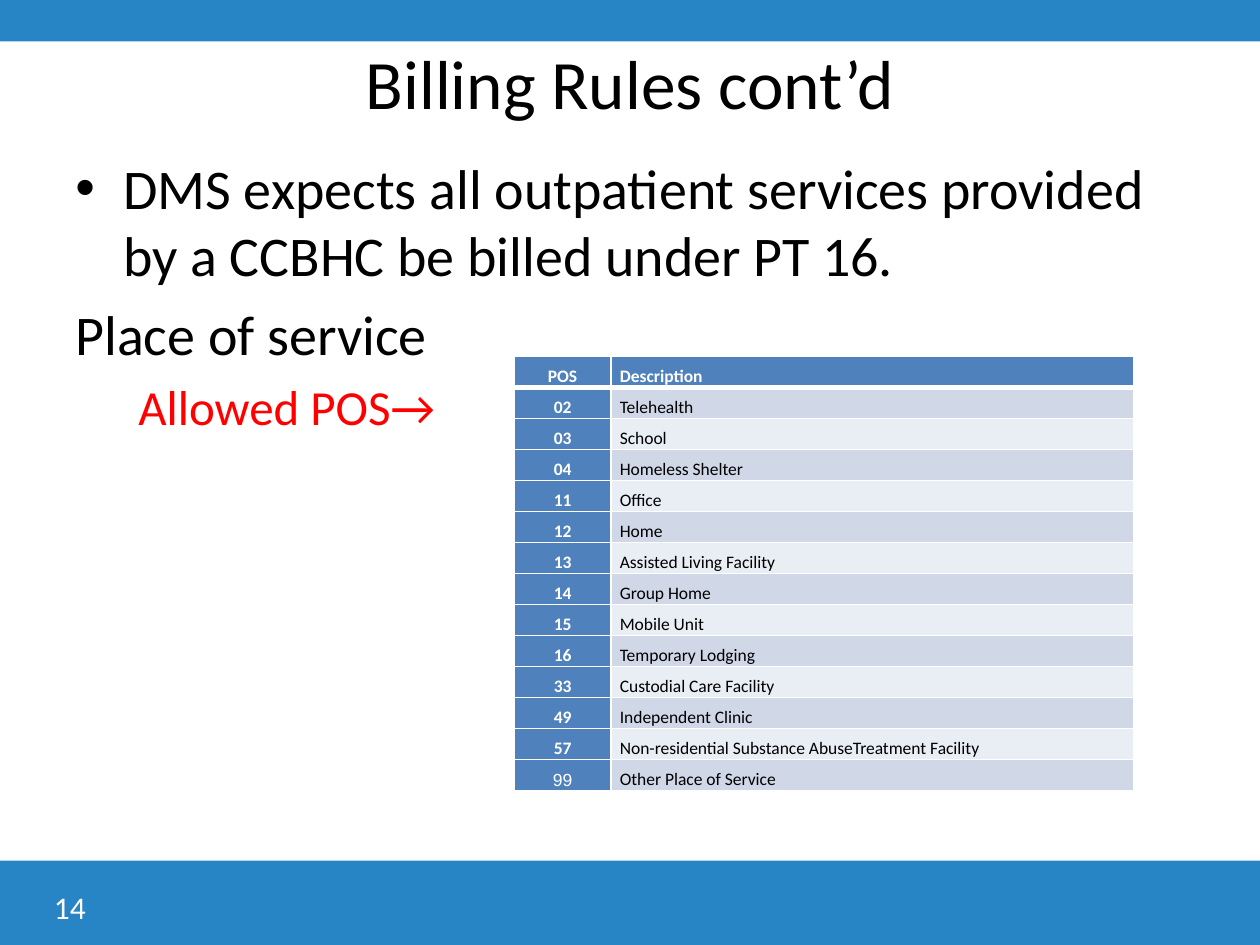
from dataclasses import dataclass

from lxml import etree
from pptx import Presentation
from pptx.dml.color import RGBColor
from pptx.enum import shapes, text
from pptx.oxml.ns import qn
from pptx.util import Inches, Pt

HUES = {
    "band": "2784C5", "head": "4F81BD", "odd": "D0D8E8", "even": "E9EDF4",
    "black": "000000", "white": "FFFFFF", "red": "FF0000",
}
LEFT, MID = text.PP_ALIGN.LEFT, text.PP_ALIGN.CENTER


@dataclass
class Style:
    size: float
    hue: str = "black"
    bold: bool = False
    font: str = "Calibri"


@dataclass
class Line:
    words: str
    style: Style
    before: float = 0
    margin: float = 0
    bullet: bool = False


@dataclass
class Place:
    code: str
    name: str


LINES = [
    Line("DMS expects all outpatient services provided by a CCBHC be billed "
         "under PT 16.", Style(32), margin=0.38, bullet=True),
    Line("Place of service", Style(32), before=6.4),
    Line("Allowed POS→", Style(28, "red"), before=5.6, margin=0.5),
]

PLACES = [
    Place("POS", "Description"),
    Place("02", "Telehealth"),
    Place("03", "School"),
    Place("04", "Homeless Shelter"),
    Place("11", "Office"),
    Place("12", "Home"),
    Place("13", "Assisted Living Facility"),
    Place("14", "Group Home"),
    Place("15", "Mobile Unit"),
    Place("16", "Temporary Lodging"),
    Place("33", "Custodial Care Facility"),
    Place("49", "Independent Clinic"),
    Place("57", "Non-residential Substance AbuseTreatment Facility"),
    Place("99", "Other Place of Service"),
]


def tint(hue: str) -> RGBColor:
    return RGBColor.from_string(HUES[hue])


def write(para, words: str, style: Style, align=LEFT) -> None:
    para.alignment = align
    run = para.add_run()
    run.text = words
    font = run.font
    font.name, font.size, font.bold = style.font, Pt(style.size), style.bold
    font.color.rgb = tint(style.hue)


def add_band(slide, top: float, height: float) -> None:
    band = slide.shapes.add_shape(
        shapes.MSO_SHAPE.RECTANGLE, 0, Inches(top), Inches(10), Inches(height))
    band.shadow.inherit = False
    band.fill.solid()
    band.fill.fore_color.rgb = tint("band")
    band.line.fill.background()


def add_box(slide, left: float, top: float, width: float, height: float):
    box = slide.shapes.add_textbox(
        Inches(left), Inches(top), Inches(width), Inches(height))
    box.text_frame.word_wrap = True
    return box.text_frame


def set_title(slide, words: str) -> None:
    title = slide.shapes.title
    title.left, title.top = Inches(0.5), Inches(0.3)
    title.width, title.height = Inches(9), Inches(0.7)
    title.text_frame.vertical_anchor = text.MSO_ANCHOR.MIDDLE
    write(title.text_frame.paragraphs[0], words, Style(39.6), MID)


def add_body(slide, lines: list[Line]) -> None:
    frame = add_box(slide, 0.5, 1.17, 9, 5.53)
    for i, line in enumerate(lines):
        para = frame.add_paragraph() if i else frame.paragraphs[0]
        props = para._p.get_or_add_pPr()
        props.set("marL", str(Inches(line.margin)))
        if line.bullet:
            props.set("indent", str(-Inches(line.margin)))
            face = etree.SubElement(props, qn("a:buFont"))
            face.set("typeface", "Arial")
            etree.SubElement(props, qn("a:buChar")).set("char", "•")
        if line.before:
            para.space_before = Pt(line.before)
        write(para, line.words, line.style)


def edge_cell(cell, base: float) -> None:
    """Draw white borders, with the bottom one base points wide."""
    props = cell._tc.get_or_add_tcPr()
    widths = {"a:lnL": 1, "a:lnR": 1, "a:lnT": 1, "a:lnB": base}
    for i, (tag, width) in enumerate(widths.items()):
        edge = etree.Element(qn(tag), w=str(Pt(width)))
        fill = etree.SubElement(edge, qn("a:solidFill"))
        etree.SubElement(fill, qn("a:srgbClr")).set("val", HUES["white"])
        props.insert(i, edge)


def fill_cell(cell, words: str, style: Style, hue: str, align, base: float) -> None:
    cell.margin_left = cell.margin_right = Inches(0.07)
    cell.margin_top = cell.margin_bottom = 0
    cell.vertical_anchor = text.MSO_ANCHOR.BOTTOM
    cell.fill.solid()
    cell.fill.fore_color.rgb = tint(hue)
    write(cell.text_frame.paragraphs[0], words, style, align)
    edge_cell(cell, base)


def add_places(slide, places: list[Place]) -> None:
    count = len(places)
    grid = slide.shapes.add_table(
        count, 2, Inches(4.08), Inches(2.83), Inches(4.92), Inches(3.45)).table
    for col, width in zip(grid.columns, (0.77, 4.15)):
        col.width = Inches(width)
    head, plain = Style(10, "white", True), Style(10)
    last = Style(10, "white", font="Arial")
    for i, place in enumerate(places):
        grid.rows[i].height = Inches(3.45 / count)
        base = 1 if i else 3
        mark = last if i == count - 1 else head
        fill_cell(grid.cell(i, 0), place.code, mark, "head", MID, base)
        hue = ("odd" if i % 2 else "even") if i else "head"
        fill_cell(grid.cell(i, 1), place.name, plain if i else head, hue, LEFT, base)


def main() -> None:
    deck = Presentation()
    deck.slide_width, deck.slide_height = Inches(10), Inches(7.5)
    slide = deck.slides.add_slide(deck.slide_layouts[5])
    add_band(slide, 0, 0.33)
    add_band(slide, 6.83, 0.67)
    set_title(slide, "Billing Rules cont’d")
    add_body(slide, LINES)
    number = add_box(slide, 0.33, 7, 2.33, 0.4)
    write(number.paragraphs[0], "14", Style(18, "white"))
    add_places(slide, PLACES)
    deck.save("out.pptx")


if __name__ == "__main__":
    main()
